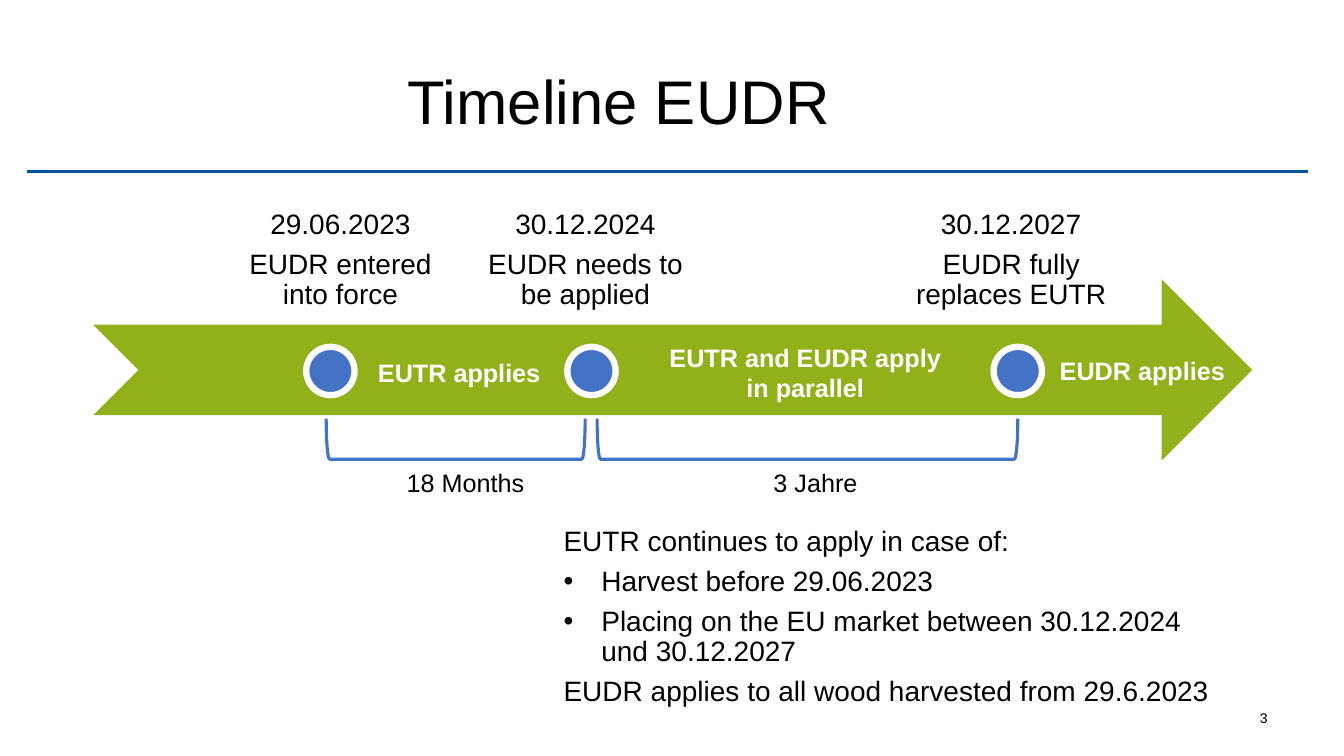
from lxml import etree
from pptx import Presentation
from pptx.dml.color import RGBColor
from pptx.enum.shapes import MSO_CONNECTOR, MSO_SHAPE as Shape
from pptx.enum.text import MSO_ANCHOR as Anchor, PP_ALIGN as Align
from pptx.oxml.ns import qn
from pptx.util import Pt

BLACK = RGBColor(0x00, 0x00, 0x00)
WHITE = RGBColor(0xFF, 0xFF, 0xFF)
GREEN = RGBColor(0x91, 0xB1, 0x1B)
BLUE = RGBColor(0x44, 0x72, 0xC4)
RULE_BLUE = RGBColor(0x00, 0x58, 0x9A)
FONT = "Arial"

TITLE = "Timeline EUDR"
PAGE = "3"
# date, event, label left, marker centre
MILESTONES = [
    ("29.06.2023", "EUDR entered into force", 159, 236),
    ("30.12.2024", "EUDR needs to be applied", 334, 422.5),
    ("30.12.2027", "EUDR fully replaces EUTR", 638, 727),
]
# text, left, top, width, height
PHASES = [
    ("EUTR applies", 262, 252, 132, 29),
    ("EUTR and EUDR apply\vin parallel", 438.5, 241, 273.5, 51),
    ("EUDR applies", 741, 250.5, 150, 29),
]
# text, caption centre, bracket left, bracket right
DURATIONS = [
    ("18 Months", 332.5, 233, 418),
    ("3 Jahre", 582.5, 426.5, 727),
]
# text, bulleted
NOTES = [
    ("EUTR continues to apply in case of:", False),
    ("Harvest before 29.06.2023", True),
    ("Placing on the EU market between 30.12.2024 und 30.12.2027", True),
    ("EUDR applies to all wood harvested from 29.6.2023", False),
]

MARKER_Y, MARKER_SIZE = 265, 34.5
BRACKET_Y, BRACKET_DEPTH = 313.5, 29
CAPTION_TOP, CAPTION_WIDTH = 330.5, 118
WIDE_INSET = 11.5
BULLET_INDENT = 27


def style(paragraph, size, color=BLACK, bold=False, align=Align.CENTER):
    paragraph.alignment = align
    font = paragraph.font
    font.name, font.size, font.bold = FONT, Pt(size), bold
    font.color.rgb = color


def add_box(left, top, width, height, inset=None):
    """Add a wrapping text box and return its text frame."""
    frame = slide.shapes.add_textbox(Pt(left), Pt(top), Pt(width), Pt(height)).text_frame
    frame.word_wrap = True
    if inset is not None:
        frame.margin_left = frame.margin_right = Pt(inset)
        frame.margin_top = frame.margin_bottom = Pt(inset)
    return frame


def add_label(text, left, top, width, height, size=18, **look):
    paragraph = add_box(left, top, width, height).paragraphs[0]
    paragraph.text = text
    style(paragraph, size, **look)


def add_paragraphs(frame, items, align):
    """Fill a frame with (text, bulleted) items."""
    for i, (text, bulleted) in enumerate(items):
        paragraph = frame.add_paragraph() if i else frame.paragraphs[0]
        paragraph.text = text
        paragraph.line_spacing = 0.9
        paragraph.space_after = Pt(7)
        if bulleted:
            props = paragraph._p.get_or_add_pPr()
            props.set("marL", str(Pt(BULLET_INDENT)))
            props.set("indent", str(-Pt(BULLET_INDENT)))
            etree.SubElement(props, qn("a:buFont"), typeface=FONT)
            etree.SubElement(props, qn("a:buChar"), char="•")
        style(paragraph, 20, align=align)


def add_shape(kind, left, top, width, height, fill=None, line=None, weight=0):
    shape = slide.shapes.add_shape(kind, Pt(left), Pt(top), Pt(width), Pt(height))
    shape.shadow.inherit = False
    if fill is None:
        shape.fill.background()
    else:
        shape.fill.solid()
        shape.fill.fore_color.rgb = fill
    if line is None:
        shape.line.fill.background()
    else:
        shape.line.color.rgb = line
        shape.line.width = Pt(weight)
    return shape


prs = Presentation()
prs.slide_width, prs.slide_height = Pt(960), Pt(540)
slide = prs.slides.add_slide(prs.slide_layouts[5])

title = slide.shapes.title
title.left, title.top, title.width, title.height = Pt(109.5), Pt(26), Pt(665), Pt(90)
title.text_frame.text = TITLE
title.text_frame.vertical_anchor = Anchor.MIDDLE
style(title.text_frame.paragraphs[0], 44)

rule = slide.shapes.add_connector(MSO_CONNECTOR.STRAIGHT, Pt(19), Pt(122.5), Pt(934), Pt(122.5))
rule.line.color.rgb = RULE_BLUE
rule.line.width = Pt(1.75)
etree.SubElement(rule._element.spPr, qn("a:effectLst"))

add_shape(Shape.NOTCHED_RIGHT_ARROW, 66.5, 199.5, 828, 129.5, fill=GREEN)

for date, event, label_left, centre in MILESTONES:
    add_shape(Shape.OVAL, centre - MARKER_SIZE / 2, MARKER_Y - MARKER_SIZE / 2,
              MARKER_SIZE, MARKER_SIZE, fill=BLUE, line=WHITE, weight=4.5)
    label = add_box(label_left, 138.5, 168.5, 165.5, WIDE_INSET)
    add_paragraphs(label, [(date, False), (event, False)], Align.CENTER)

for text, left, top, width, height in PHASES:
    add_label(text, left, top, width, height, color=WHITE, bold=True)

for text, caption_centre, start, end in DURATIONS:
    span, middle = end - start, (start + end) / 2
    bracket = add_shape(Shape.LEFT_BRACKET, middle - BRACKET_DEPTH / 2, BRACKET_Y - span / 2,
                        BRACKET_DEPTH, span, line=BLUE, weight=2.25)
    bracket.rotation = 270
    add_label(text, caption_centre - CAPTION_WIDTH / 2, CAPTION_TOP, CAPTION_WIDTH, 29)

add_paragraphs(add_box(391, 365, 492, 165.5, WIDE_INSET), NOTES, Align.LEFT)
add_label(PAGE, 688.5, 503.5, 224, 26, size=10, align=Align.RIGHT)

prs.save("out.pptx")
